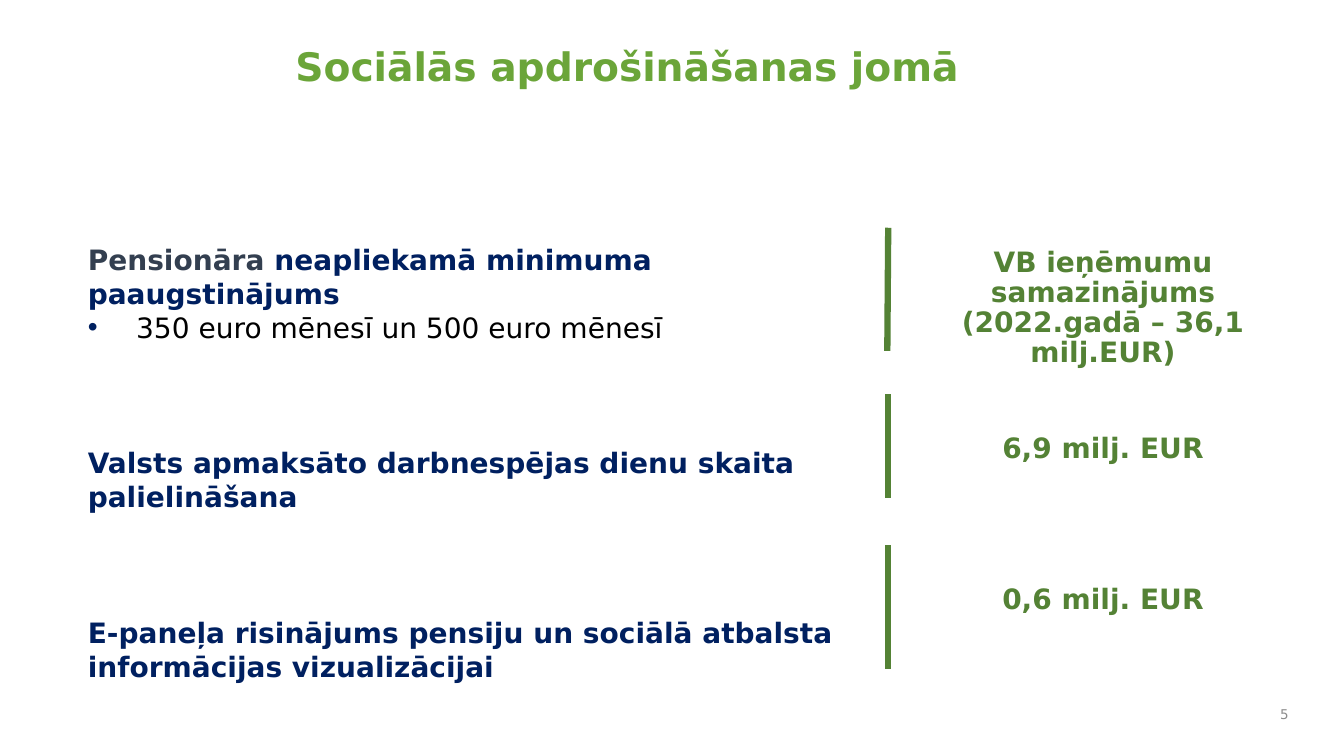
from dataclasses import dataclass

from lxml.etree import SubElement
from pptx import Presentation
from pptx.dml.color import RGBColor
from pptx.enum.shapes import MSO_CONNECTOR as Connector
from pptx.enum.text import MSO_ANCHOR as Anchor, MSO_AUTO_SIZE as AutoSize, PP_ALIGN as Align
from pptx.oxml.ns import qn
from pptx.util import Inches, Pt

WIDTH, HEIGHT = Inches(13.33), Inches(7.5)
FONT = "DejaVu Sans"
COLORS = {
    "title": "6BA539",
    "slate": "333F50",
    "navy": "002060",
    "black": "000000",
    "green": "548235",
    "grey": "8C8C8C",
}


@dataclass(frozen=True)
class Area:
    """A rectangle in percent of the slide's width and height."""
    left: float
    top: float
    width: float
    height: float


@dataclass(frozen=True)
class Measure:
    heading: tuple[tuple[str, str], ...]
    amount: str
    amount_top: float
    amount_height: float
    bar_top: float
    bar_bottom: float
    bar_top_x: float = 66.05
    bar_bottom_x: float = 66.05
    detail: str = ""


MEASURES = (
    Measure((("Pensionāra", "slate"), (" neapliekamā minimuma paaugstinājums", "navy")),
            "VB ieņēmumu samazinājums (2022.gadā – 36,1 milj.EUR)",
            32.13, 16.13, 30.13, 46.4, 66.09, 66.02,
            detail="350 euro mēnesī un 500 euro mēnesī"),
    Measure((("Valsts apmaksāto darbnespējas dienu skaita palielināšana", "navy"),),
            "6,9 milj. EUR", 56.8, 8.8, 52.13, 65.87, 66.09, 66.09),
    Measure((("E-paneļa risinājums pensiju un sociālā atbalsta informācijas vizualizācijai", "navy"),),
            "0,6 milj. EUR", 76.8, 8.8, 72.13, 88.53),
)
TITLE = Area(21.23, 5.6, 76.29, 15.07)
BODY = Area(5.78, 31.47, 58.59, 61.2)
NUMBER = Area(93.32, 92.27, 3.3, 4.4)
AMOUNT_LEFT, AMOUNT_WIDTH = 69.69, 24.76


def across(percent: float) -> int:
    return round(WIDTH * percent / 100)


def down(percent: float) -> int:
    return round(HEIGHT * percent / 100)


def place(shape, area: Area, anchor=Anchor.TOP):
    """Moves a shape to its area and returns its prepared text frame."""
    shape.left, shape.top = across(area.left), down(area.top)
    shape.width, shape.height = across(area.width), down(area.height)
    frame = shape.text_frame
    frame.word_wrap = True
    frame.auto_size = AutoSize.NONE
    frame.vertical_anchor = anchor
    return frame


def write(paragraph, text: str, *, color: str, size: float = 20, bold: bool = True,
          align=Align.LEFT, line_spacing: float = 1.0, space_before: float = 0) -> None:
    paragraph.alignment = align
    paragraph.line_spacing = line_spacing
    paragraph.space_before = Pt(space_before)
    run = paragraph.add_run()
    run.text = text
    run.font.name = FONT
    run.font.size = Pt(size)
    run.font.bold = bold
    run.font.color.rgb = RGBColor.from_string(COLORS[color])


def set_bullet(paragraph, bullet: str = "") -> None:
    """Gives a paragraph a hanging bullet, or removes the template's one."""
    properties = paragraph._p.get_or_add_pPr()
    indent = Inches(0.48) if bullet else 0
    properties.set("marL", str(indent))
    properties.set("indent", str(-indent))
    if not bullet:
        SubElement(properties, qn("a:buNone"))
        return
    color = SubElement(properties, qn("a:buClr"))
    SubElement(color, qn("a:srgbClr")).set("val", COLORS["navy"])
    SubElement(properties, qn("a:buFont")).set("typeface", "Arial")
    SubElement(properties, qn("a:buChar")).set("char", bullet)


def write_measures(frame) -> None:
    for index, measure in enumerate(MEASURES):
        heading = frame.add_paragraph() if index else frame.paragraphs[0]
        set_bullet(heading)
        for text, color in measure.heading:
            write(heading, text, color=color, space_before=73 if index else 0)
        if measure.detail:
            detail = frame.add_paragraph()
            set_bullet(detail, "•")
            write(detail, measure.detail, color="black", bold=False)


def add_text(slide, area: Area, text: str, anchor=Anchor.TOP, **text_format) -> None:
    box = slide.shapes.add_textbox(0, 0, 0, 0)
    write(place(box, area, anchor).paragraphs[0], text, **text_format)


def add_bar(slide, measure: Measure) -> None:
    bar = slide.shapes.add_connector(
        Connector.STRAIGHT,
        across(measure.bar_top_x), down(measure.bar_top),
        across(measure.bar_bottom_x), down(measure.bar_bottom))
    bar.line.color.rgb = RGBColor.from_string(COLORS["green"])
    bar.line.width = Pt(4.5)
    SubElement(bar._element.spPr, qn("a:effectLst"))


def main() -> None:
    presentation = Presentation()
    presentation.slide_width, presentation.slide_height = WIDTH, HEIGHT
    slide = presentation.slides.add_slide(presentation.slide_layouts[1])

    title = place(slide.shapes.title, TITLE)
    write(title.paragraphs[0], "Sociālās apdrošināšanas jomā",
          color="title", size=28, line_spacing=0.9)
    write_measures(place(slide.placeholders[1], BODY))

    for measure in MEASURES:
        add_bar(slide, measure)
        area = Area(AMOUNT_LEFT, measure.amount_top, AMOUNT_WIDTH, measure.amount_height)
        add_text(slide, area, measure.amount, color="green",
                 align=Align.CENTER, line_spacing=0.9)
    add_text(slide, NUMBER, "5", Anchor.MIDDLE, color="grey", size=9.6,
             bold=False, align=Align.RIGHT)

    presentation.save("out.pptx")


if __name__ == "__main__":
    main()
